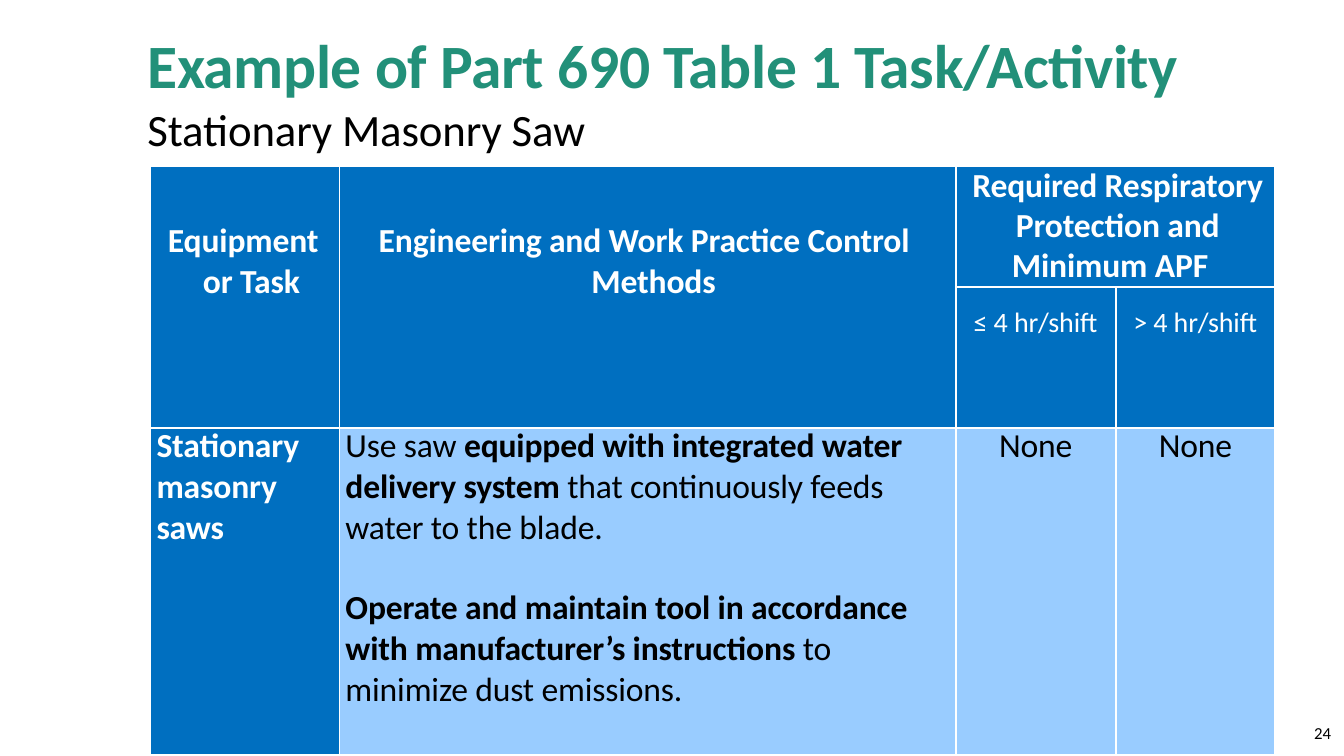
import pptx
import pptx.util
import pptx.dml.color
import pptx.enum.text
import lxml.etree
from dataclasses import dataclass

Pt = pptx.util.Pt
CENTER = pptx.enum.text.PP_ALIGN.CENTER
NS = "http://schemas.openxmlformats.org/drawingml/2006/main"


@dataclass(frozen=True)
class Theme:
    font: str = "Calibri"
    green: str = "229079"
    black: str = "000000"
    white: str = "FFFFFF"
    blue: str = "006FC0"
    pale: str = "99CCFF"
    title: int = 44
    sub: int = 32
    body: int = 24
    hours: int = 20
    page: int = 12


T = Theme()
HEAD = dict(size=T.body, color=T.white, bold=True)
HOURS = dict(size=T.hours, color=T.white, bold=False)
PLAIN = dict(size=T.body, color=T.black, bold=False)
STRONG = dict(PLAIN, bold=True)
FIRST = dict(line_spacing=Pt(27.3))


def rgb(code):
    return pptx.dml.color.RGBColor.from_string(code)


def apply(item, look):
    for name, value in look.items():
        setattr(item, name, value)


def para(runs, indent=None, **look):
    return runs, indent or {}, look


def write(frame, paras, space=-0.1):
    for i, (runs, indent, look) in enumerate(paras):
        line = frame.paragraphs[0] if i == 0 else frame.add_paragraph()
        props = line._p.get_or_add_pPr()
        for name, value in indent.items():
            props.set(name, str(int(Pt(value))))
        apply(line, dict(space_before=Pt(0), **look) if "space_before" not in look else look)
        for text, style in runs:
            for j, part in enumerate(text.split("\v")):
                if j:
                    line.add_line_break()
                run = line.add_run()
                run.text = part
                apply(run.font, dict(name=T.font, size=Pt(style["size"]), bold=style["bold"]))
                run.font.color.rgb = rgb(style["color"])
                gap = style.get("space", space)
                run._r.get_or_add_rPr().set("spc", str(round(gap * 100)))


def label(slide, box, paras):
    frame = slide.shapes.add_textbox(*map(Pt, box)).text_frame
    apply(frame, dict(word_wrap=True, margin_left=0, margin_top=0, margin_right=0, margin_bottom=0))
    write(frame, paras)


def heading(slide, box):
    title = dict(size=T.title, color=T.green, bold=True, space=-0.3)
    sub = dict(size=T.sub, color=T.black, bold=False)
    label(slide, box, [
        para([("Example of Part 690 Table 1 Task/Activity", title)], {"marL": 0.9}),
        para([("Stationary Masonry Saw", sub)], {"marL": 0.9}, space_before=Pt(0.8)),
    ])


def number(slide, box):
    style = dict(size=T.page, color=T.black, bold=False, space=0)
    label(slide, box, [para([("24", style)], {"marL": 2}, line_spacing=Pt(12.4))])


def frame_cell(cell):
    props = cell._tc.get_or_add_tcPr()
    for side in "LRTB":
        edge = lxml.etree.SubElement(props, f"{{{NS}}}ln{side}", w=str(int(Pt(1.5))))
        fill = lxml.etree.SubElement(edge, f"{{{NS}}}solidFill")
        lxml.etree.SubElement(fill, f"{{{NS}}}srgbClr", val=T.white)


def task_grid(slide, box):
    left, top, width, height = box
    cols = [share * width for share in (0.168, 0.548, 0.142, 0.142)]
    rows = [87, 100.5, height - 187.5]
    table = slide.shapes.add_table(3, 4, *map(Pt, box)).table
    for col, size in zip(table.columns, cols):
        col.width = Pt(size)
    for row, size in zip(table.rows, rows):
        row.height = Pt(size)
    for r in range(3):
        for c in range(4):
            cell = table.cell(r, c)
            apply(cell, dict(margin_left=0, margin_top=0, margin_right=0, margin_bottom=0))
            frame_cell(cell)
            cell.fill.solid()
            cell.fill.fore_color.rgb = rgb(T.pale if r == 2 and c else T.blue)
    for start, end in (((0, 0), (1, 0)), ((0, 1), (1, 1)), ((0, 2), (0, 3))):
        table.cell(*start).merge(table.cell(*end))

    inset = {"marL": 4.3}
    none = [para([("None", PLAIN)], alignment=CENTER, **FIRST)]
    texts = {
        (0, 0): (39, [para([("Equipment\vor Task", HEAD)], {"marL": 37.5, "indent": -25})]),
        (0, 1): (39, [para([("Engineering and Work Practice Control\vMethods", HEAD)],
                           {"marL": 180, "indent": -152})]),
        (0, 2): (0.6, [
            para([("Required Respiratory\vProtection and", HEAD)], {"marL": 3},
                 alignment=CENTER, line_spacing=Pt(28.8)),
            para([("Minimum APF", HEAD)], {"marR": 8},
                 alignment=CENTER, line_spacing=Pt(27.9)),
        ]),
        (1, 2): (13.5, [para([("≤ 4 hr/shift", HOURS)], alignment=CENTER)]),
        (1, 3): (13.5, [para([("> 4 hr/shift", HOURS)], alignment=CENTER)]),
        (2, 0): (0, [
            para([("Stationary", HEAD)], inset, **FIRST),
            para([("masonry", HEAD)], inset),
            para([("saws", HEAD)], inset),
        ]),
        (2, 1): (0, [
            para([("Use saw ", PLAIN), ("equipped with integrated water", STRONG)], inset, **FIRST),
            para([("delivery system ", STRONG), ("that continuously feeds", PLAIN)], inset),
            para([("water to the blade.", PLAIN)], inset),
            para([("Operate and maintain tool in accordance\vwith manufacturer’s instructions ", STRONG),
                  ("to\vminimize dust emissions.", PLAIN)], inset, space_before=Pt(28)),
        ]),
        (2, 2): (0, none),
        (2, 3): (0, none),
    }
    for place, (pad, paras) in texts.items():
        cell = table.cell(*place)
        cell.margin_top = Pt(pad)
        write(cell.text_frame, paras)


def main():
    deck = pptx.Presentation()
    apply(deck, dict(slide_width=Pt(960), slide_height=Pt(540)))
    slide = deck.slides.add_slide(deck.slide_layouts[6])
    heading(slide, (104.4, 19, 751, 94.3))
    number(slide, (936.7, 518.4, 16.6, 13.7))
    task_grid(slide, (107.5, 118.3, 803.5, 421))
    deck.save("out.pptx")


if __name__ == "__main__":
    main()
